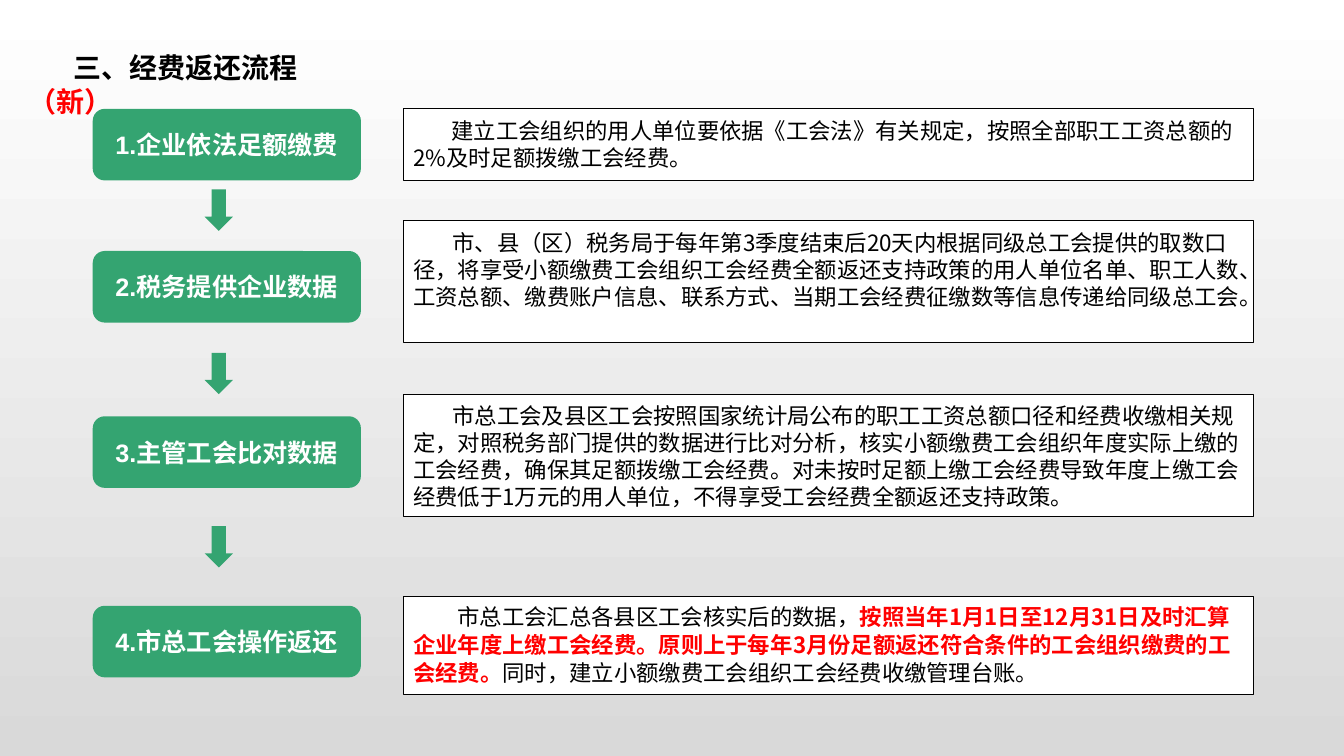
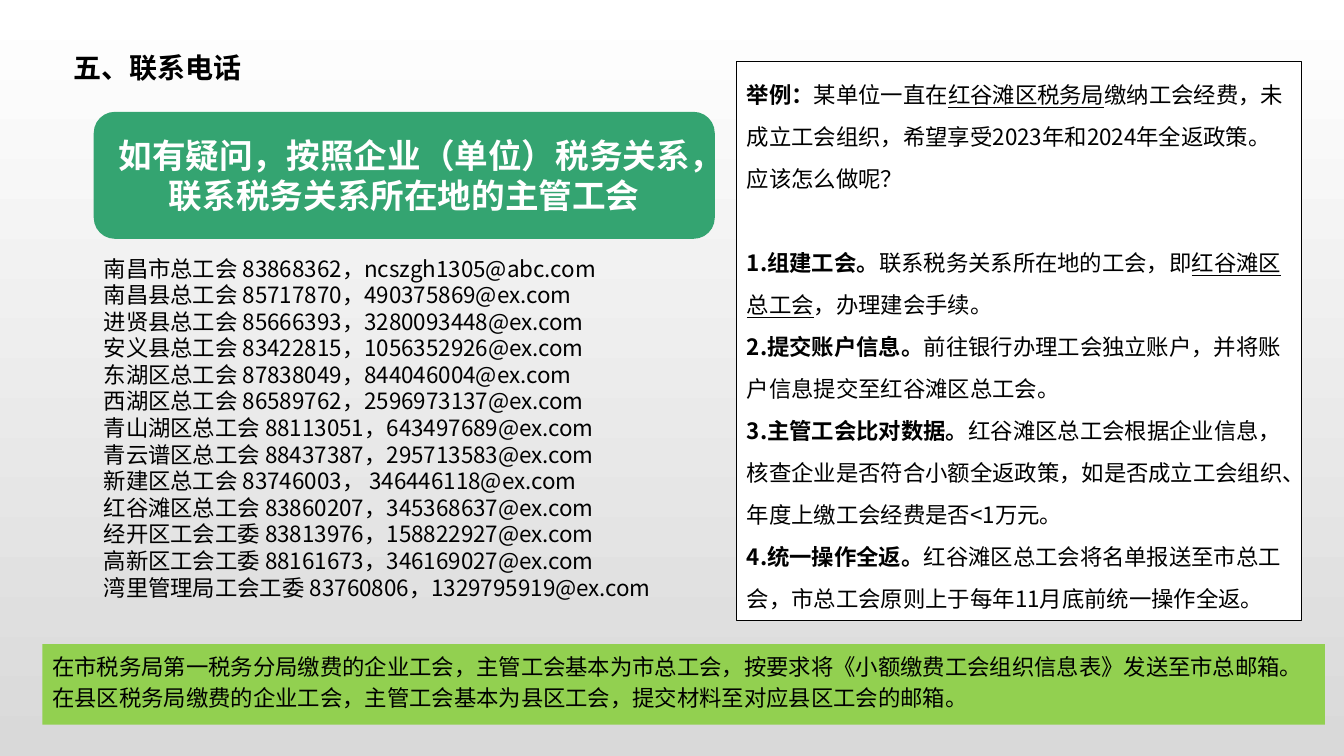
from pptx import Presentation
from pptx.dml.color import RGBColor
from pptx.enum.shapes import MSO_SHAPE
from pptx.enum.text import MSO_ANCHOR, MSO_AUTO_SIZE, PP_ALIGN
from pptx.oxml.ns import qn
from pptx.util import Inches, Pt

RECT, ROUND, ARROW = MSO_SHAPE.RECTANGLE, MSO_SHAPE.ROUNDED_RECTANGLE, MSO_SHAPE.DOWN_ARROW
TOP, MIDDLE = MSO_ANCHOR.TOP, MSO_ANCHOR.MIDDLE
LEFT, CENTER = PP_ALIGN.LEFT, PP_ALIGN.CENTER

GREEN, LIME, WHITE, BLACK, RED = "34A471", "92D050", "FFFFFF", "000000", "FF0000"
HEAD_FONT, BODY_FONT = "Arial", "Noto Sans CJK SC"

# Run styles
PLAIN, BOLD, UNDER = {}, {"bold": True}, {"underline": True}
ALERT = {"bold": True, "color": RED}

# Step label, step top, note top, note height, line pitch, first-line indent, top inset, note runs
STEPS = [
    ("1.企业依法足额缴费", 1.08, 1.08, 0.71, 19.3, 0.38, 0.08, [
        ("建立工会组织的用人单位要依据《工会法》有关规定，按照全部职工工资总额的2%及时足额拨缴工会经费。", PLAIN)]),
    ("2.税务提供企业数据", 2.49, 2.19, 1.21, 19.3, 0.39, 0.08, [
        ("市、县（区）税务局于每年第3季度结束后20天内根据同级总工会提供的取数口径，"
         "将享受小额缴费工会组织工会经费全额返还支持政策的用人单位名单、职工人数、工资总额、"
         "缴费账户信息、联系方式、当期工会经费征缴数等信息传递给同级总工会。", PLAIN)]),
    ("3.主管工会比对数据", 4.13, 3.91, 1.21, 19.3, 0.39, 0.08, [
        ("市总工会及县区工会按照国家统计局公布的职工工资总额口径和经费收缴相关规定，"
         "对照税务部门提供的数据进行比对分析，核实小额缴费工会组织年度实际上缴的工会经费，"
         "确保其足额拨缴工会经费。对未按时足额上缴工会经费导致年度上缴工会经费低于1万元的用人单位，"
         "不得享受工会经费全额返还支持政策。", PLAIN)]),
    ("4.市总工会操作返还", 6.01, 5.92, 0.97, 20, 0.44, 0.05, [
        ("市总工会汇总各县区工会核实后的数据，", PLAIN),
        ("按照当年1月1日至12月31日及时汇算企业年度上缴工会经费。"
         "原则上于每年3月份足额返还符合条件的工会组织缴费的工会经费。", ALERT),
        ("同时，建立小额缴费工会组织工会经费收缴管理台账。", PLAIN)]),
]
ARROW_TOPS = [1.88, 3.5, 5.22]

CONTACTS = [
    "南昌市总工会 83868362，ncszgh1305@abc.com",
    "南昌县总工会 85717870，490375869@ex.com",
    "进贤县总工会 85666393，3280093448@ex.com",
    "安义县总工会 83422815，1056352926@ex.com",
    "东湖区总工会 87838049，844046004@ex.com",
    "西湖区总工会 86589762，2596973137@ex.com",
    "青山湖区总工会 88113051，643497689@ex.com",
    "青云谱区总工会 88437387，295713583@ex.com",
    "新建区总工会 83746003， 346446118@ex.com",
    "红谷滩区总工会 83860207，345368637@ex.com",
    "经开区工会工委 83813976，158822927@ex.com",
    "高新区工会工委 88161673，346169027@ex.com",
    "湾里管理局工会工委 83760806，1329795919@ex.com",
]

EXAMPLE = [
    [("举例：", BOLD), ("某单位一直在", PLAIN), ("红谷滩区税务局", UNDER),
     ("缴纳工会经费，未成立工会组织，希望享受2023年和2024年全返政策。应该怎么做呢？", PLAIN)],
    [("1.组建工会。", BOLD), ("联系税务关系所在地的工会，即", PLAIN),
     ("红谷滩区总工会", UNDER), ("，办理建会手续。", PLAIN)],
    [("2.提交账户信息。", BOLD),
     ("前往银行办理工会独立账户，并将账户信息提交至红谷滩区总工会。", PLAIN)],
    [("3.主管工会比对数据。", BOLD),
     ("红谷滩区总工会根据企业信息，核查企业是否符合小额全返政策，"
      "如是否成立工会组织、年度上缴工会经费是否<1万元。", PLAIN)],
    [("4.统一操作全返。", BOLD),
     ("红谷滩区总工会将名单报送至市总工会，市总工会原则上于每年11月底前统一操作全返。", PLAIN)],
]

ADVICE = [
    "在市税务局第一税务分局缴费的企业工会，主管工会基本为市总工会，按要求将《小额缴费工会组织信息表》发送至市总邮箱。",
    "在县区税务局缴费的企业工会，主管工会基本为县区工会，提交材料至对应县区工会的邮箱。",
]


def rgb(color):
    return RGBColor.from_string(color)


def write(tf, paragraphs, size=16, font=BODY_FONT, color=BLACK, bold=False,
          align=LEFT, anchor=TOP, pitch=None, indent=0):
    """Fill a text frame; each paragraph is a list of (text, style) runs."""
    tf.word_wrap = True
    tf.auto_size = MSO_AUTO_SIZE.NONE
    tf.vertical_anchor = anchor
    for i, runs in enumerate(paragraphs):
        p = tf.add_paragraph() if i else tf.paragraphs[0]
        p.alignment = align
        if pitch:
            p.line_spacing = Pt(pitch)
        if indent:
            pPr = p._p.get_or_add_pPr()
            pPr.set("marL", "0")
            pPr.set("indent", str(Inches(indent)))
        for text, style in runs:
            r = p.add_run()
            r.text = text
            f = r.font
            f.size, f.name = Pt(size), font
            f.bold = style.get("bold", bold)
            f.underline = style.get("underline", False)
            f.color.rgb = rgb(style.get("color", color))
            # East Asian glyphs take the body font
            ea = f._element.makeelement(qn("a:ea"), {"typeface": BODY_FONT})
            f._element.find(qn("a:latin")).addnext(ea)


def add_box(s, kind, box, fill, line=None):
    sp = s.shapes.add_shape(kind, *map(Inches, box))
    sp.shadow.inherit = False
    sp.fill.solid()
    sp.fill.fore_color.rgb = rgb(fill)
    if line:
        sp.line.color.rgb = rgb(line)
        sp.line.width = Pt(0.75)
    else:
        sp.line.fill.background()
    return sp


def add_note(s, box, paragraphs, **text_format):
    """White outlined panel of body text."""
    sp = add_box(s, RECT, box, WHITE, BLACK)
    write(sp.text_frame, paragraphs, **text_format)
    return sp


def add_label(s, box, text, size):
    """Green rounded panel with a bold white label."""
    sp = add_box(s, ROUND, box, GREEN)
    write(sp.text_frame, [[(text, PLAIN)]], size, HEAD_FONT, WHITE, True, CENTER, MIDDLE)


def add_titled_slide(prs, runs, width):
    s = prs.slides.add_slide(prs.slide_layouts[5])
    title = s.shapes.title
    title.left, title.top, title.width, title.height = map(Inches, (0.18, 0.45, width, 0.45))
    write(title.text_frame, [runs], 20, HEAD_FONT, bold=True, indent=0.45)
    return s


def set_background(prs):
    fill = prs.slide_master.background.fill
    fill.gradient()
    fill.gradient_angle = 270
    for stop, color in zip(fill.gradient_stops, (WHITE, "D9D9D9")):
        stop.color.rgb = rgb(color)


def build_process(prs):
    s = add_titled_slide(prs, [("三、经费返还流程", PLAIN), ("（新）", {"bold": True, "color": RED})], 3.67)
    for label, step_top, note_top, height, pitch, indent, inset, runs in STEPS:
        add_label(s, (0.92, step_top, 2.66, 0.71), label, 18)
        note = add_note(s, (4, note_top, 8.43, height), [runs], pitch=pitch, indent=indent)
        note.text_frame.margin_top = Inches(inset)
    for top in ARROW_TOPS:
        add_box(s, ARROW, (2.03, top, 0.28, 0.41), GREEN)


def build_contacts(prs):
    s = add_titled_slide(prs, [("五、联系电话", PLAIN)], 3.23)
    add_label(s, (0.93, 1.11, 6.16, 1.26), "如有疑问，按照企业（单位）税务关系，联系税务关系所在地的主管工会", 24)

    # Contact list
    contacts = s.shapes.add_textbox(*map(Inches, (0.93, 2.48, 6.21, 3.56)))
    write(contacts.text_frame, [[(line, PLAIN)] for line in CONTACTS], pitch=19)

    # Worked example, with a one-line gap between question and answer
    example = add_note(s, (7.31, 0.61, 5.6, 5.55), EXAMPLE, pitch=30)
    example.text_frame.paragraphs[1].space_before = Pt(30)

    # Advice band
    band = add_box(s, RECT, (0.42, 6.39, 12.72, 0.8), LIME)
    write(band.text_frame, [[(line, PLAIN)] for line in ADVICE], pitch=22)


def main():
    prs = Presentation()
    prs.slide_width, prs.slide_height = Inches(13.33), Inches(7.5)
    set_background(prs)
    build_process(prs)
    build_contacts(prs)
    prs.save("out.pptx")


if __name__ == "__main__":
    main()
